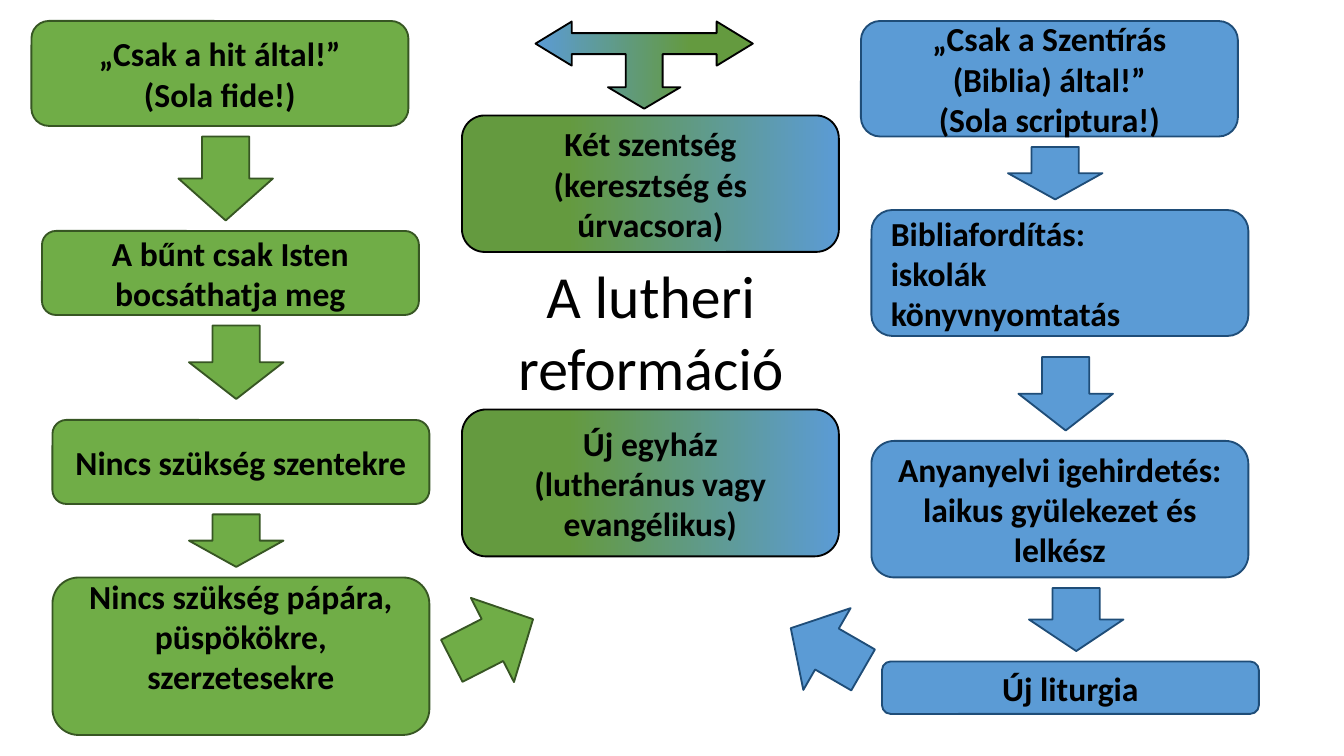
from copy import deepcopy

from pptx import Presentation
from pptx import util as u
from pptx.dml.color import RGBColor
from pptx.enum import shapes, text
from pptx.oxml.ns import qn

COLS, ROWS = 128, 72
WIDTH, HEIGHT = u.Inches(10), u.Inches(5.625)
FONT = "Calibri"
GREEN, BLUE = ("70AD47", "375623"), ("5B9BD5", "1F4D78")
BLEND = [(0, "649A3F"), (0.28, "649A3F"), (1, "5B9BD5")]
CENTER, LEFT = text.PP_ALIGN.CENTER, text.PP_ALIGN.LEFT

FAITH_BOXES = [
    (3, 2, 10, ["„Csak a hit által!”", "(Sola fide!)"]),
    (4, 22, 8, ["A bűnt csak Isten bocsáthatja meg"]),
    (5, 40, 8, ["Nincs szükség szentekre"]),
]
SCRIPTURE_BOXES = [
    (82, 2, 11, ["„Csak a Szentírás (Biblia) által!”", "(Sola scriptura!)"]),
    (83, 42, 13, ["Anyanyelvi igehirdetés: laikus gyülekezet és lelkész"]),
    (84, 63, 5, ["Új liturgia"]),
]
SHARED_BOXES = [
    (44, 11, 13, ["Két szentség", "(keresztség és úrvacsora)"]),
    (44, 39, 14, ["Új egyház", "(lutheránus vagy evangélikus)"]),
]
FAITH_ARROWS = [(17, 13, 8, 0), (18, 31, 7, 0), (18, 49, 5, 0), (42.4, 56.6, 8.7, 242.9)]
SCRIPTURE_ARROWS = [(96, 14, 5, 0), (97, 34, 7, 0), (98, 56, 6, 0), (74.25, 57.85, 7.95, 120)]


def color(value):
    return RGBColor.from_string(value)


def grid(*cells):
    return [round(WIDTH * c / COLS) if i % 2 == 0 else round(HEIGHT * c / ROWS)
            for i, c in enumerate(cells)]


def paint(sp, style):
    sp.shadow.inherit = False
    sp.line.width = u.Pt(1)
    if style is not BLEND:
        fill, line = style
        sp.fill.solid()
        sp.fill.fore_color.rgb = color(fill)
        sp.line.color.rgb = color(line)
        return
    sp.line.color.rgb = color("000000")
    sp.fill.gradient()
    sp.fill.gradient_angle = 0
    stops = next(sp._element.spPr.iter(qn("a:gsLst")))
    stops.append(deepcopy(stops[-1]))
    for stop, (position, value) in zip(sp.fill.gradient_stops, BLEND):
        stop.position = position
        stop.color.rgb = color(value)


def write(tf, lines, size, bold, align):
    tf.word_wrap = True
    for i, line in enumerate(lines):
        p = tf.paragraphs[0] if i == 0 else tf.add_paragraph()
        p.alignment = align
        r = p.add_run()
        r.text = line
        r.font.name = FONT
        r.font.size = u.Pt(size)
        r.font.bold = bold
        r.font.color.rgb = color("000000")


def add_box(s, style, x, y, h, lines, align=CENTER):
    sp = s.shapes.add_shape(shapes.MSO_SHAPE.ROUNDED_RECTANGLE, *grid(x, y, 35.9, h))
    paint(sp, style)
    sp.text_frame.vertical_anchor = text.MSO_ANCHOR.MIDDLE
    write(sp.text_frame, lines, 18, True, align)
    return sp


def add_arrow(s, style, x, y, h, angle):
    sp = s.shapes.add_shape(shapes.MSO_SHAPE.DOWN_ARROW, *grid(x, y, 9, h))
    sp.rotation = angle
    paint(sp, style)


def add_three_way_arrow(s, x, y):
    half = [(3.45, 2.05), (1.75, 2.05), (1.75, 5.2), (6.9, 5.2), (6.9, 4.1),
            (10.35, 6.2), (6.9, 8.3), (6.9, 7.2)]
    outline = half + [(-dx, dy) for dx, dy in reversed(half)]
    points = [grid(x + dx, y + dy) for dx, dy in outline]
    builder = s.shapes.build_freeform(*grid(x, y))
    builder.add_line_segments(points, close=True)
    sp = builder.convert_to_shape()
    sp.rotation = 180
    paint(sp, BLEND)


def add_title(s, x, y, w, h, line):
    sp = s.shapes.add_textbox(*grid(x, y, w, h))
    write(sp.text_frame, [line], 32, False, CENTER)


def main():
    prs = Presentation()
    prs.slide_width, prs.slide_height = WIDTH, HEIGHT
    s = prs.slides.add_slide(prs.slide_layouts[6])

    for style, boxes in ((GREEN, FAITH_BOXES), (BLUE, SCRIPTURE_BOXES), (BLEND, SHARED_BOXES)):
        for box in boxes:
            add_box(s, style, *box)
    add_box(s, BLUE, 83, 20, 12, ["Bibliafordítás:", "iskolák", "könyvnyomtatás"], LEFT)
    clergy = add_box(s, GREEN, 5, 55, 15, ["Nincs szükség pápára, püspökökre, szerzetesekre"])
    clergy.text_frame.margin_bottom = u.Inches(0.35)

    for style, arrows in ((GREEN, FAITH_ARROWS), (BLUE, SCRIPTURE_ARROWS)):
        for arrow in arrows:
            add_arrow(s, style, *arrow)
    add_three_way_arrow(s, 61.35, 2.05)
    add_title(s, 40, 24, 44, 15, "A lutheri reformáció")

    prs.save("out.pptx")


if __name__ == "__main__":
    main()
